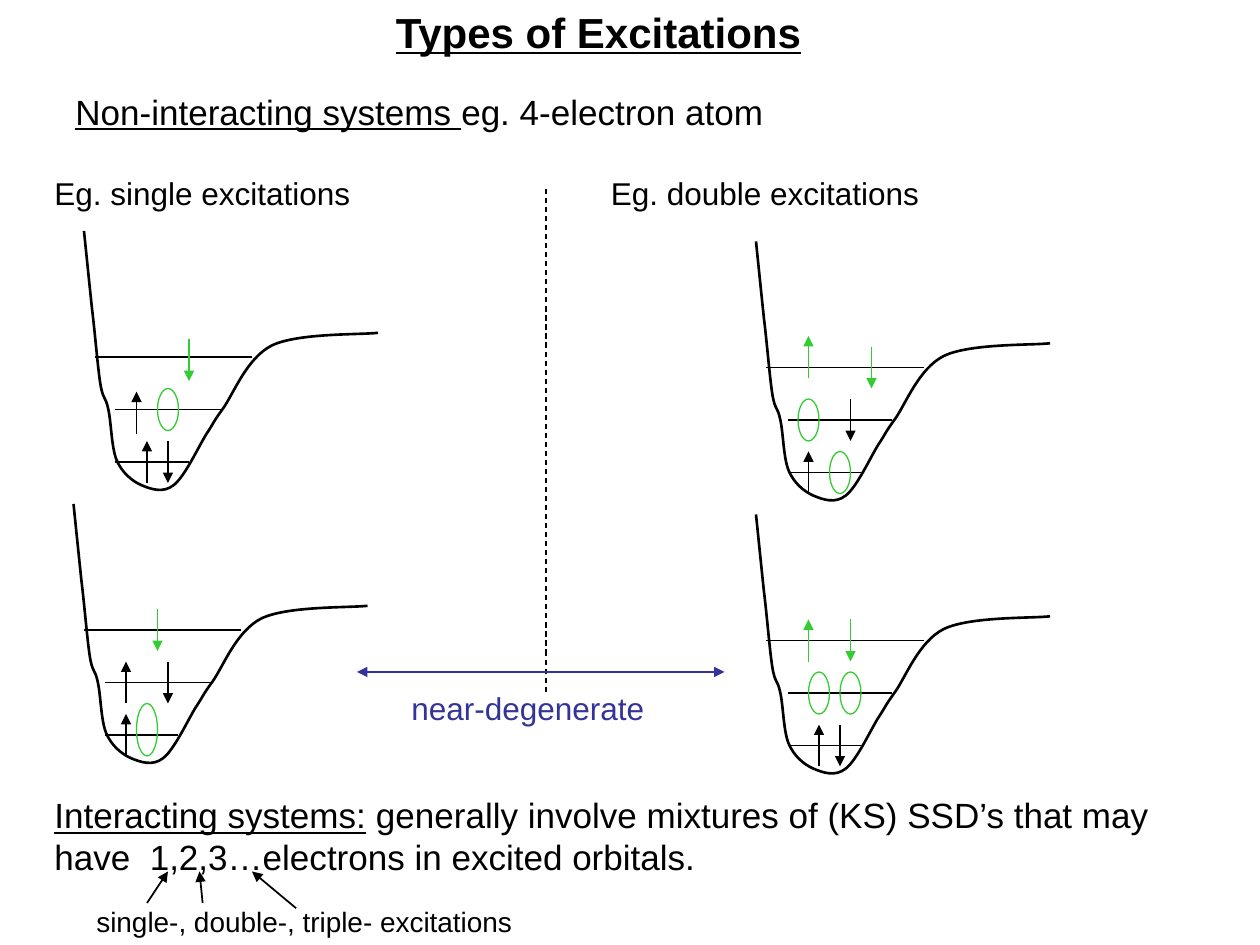
from dataclasses import dataclass
from typing import NamedTuple

from lxml.etree import SubElement
from pptx import Presentation
from pptx.dml.color import RGBColor
from pptx.enum.dml import MSO_LINE_DASH_STYLE as Dash
from pptx.enum.shapes import MSO_CONNECTOR, MSO_SHAPE
from pptx.enum.text import MSO_AUTO_SIZE, PP_ALIGN as Align
from pptx.oxml.ns import qn
from pptx.util import Inches, Pt


@dataclass(frozen=True)
class Theme:
    font: str = "Arial"
    ink: str = "000000"
    excited: str = "33CC33"
    link: str = "333399"
    title: int = 24
    body: int = 20
    label: int = 18
    note: int = 16
    thin: float = 0.75
    medium: float = 1
    thick: float = 1.5


class Electron(NamedTuple):
    column: float
    row: float
    up: bool
    excited: bool = False


class Hole(NamedTuple):
    column: float  # centre of the ellipse
    row: float
    height: float = 4


class Well(NamedTuple):
    column: float
    row: float
    electrons: list[Electron]
    holes: list[Hole]


THEME = Theme()
CELLS_PER_INCH = 12  # the slide is a grid of 120 columns by 90 rows
ARROW_ROWS = 4
HOLE_COLUMNS = 2

# Energy levels (first column, last column, row), measured from a well's corner
LEVELS = [(3, 10, 22), (1, 16, 12), (3, 13, 17)]

# Potential curve: start point, then three Bézier points for each stretch
CURVE = [
    (0, 0),
    (0.25, 2.4), (0.5, 4.85), (0.75, 7.25),
    (1.05, 9.7), (1.3, 12.9), (1.55, 14.5),
    (1.8, 16.1), (2.05, 15.7), (2.3, 16.9),
    (2.6, 18.15), (2.6, 20.55), (3.1, 21.8),
    (3.6, 23), (4.55, 23.8), (5.45, 24.2),
    (6.4, 24.6), (7.55, 25), (8.55, 24.2),
    (9.6, 23.4), (10.9, 20.55), (11.65, 19.35),
    (12.45, 18.15), (12.2, 18.35), (13.25, 16.9),
    (14.25, 15.5), (15.5, 12.1), (17.9, 10.9),
    (20.4, 9.7), (26.3, 9.9), (28, 9.7),
]

WELLS = [
    Well(8, 22,
         [Electron(6, 20, True), Electron(8, 20, False),
          Electron(5, 15.3, True), Electron(10, 10.3, False, True)],
         [Hole(8, 15)]),
    Well(72, 23,
         [Electron(5, 20, True), Electron(9, 15, False),
          Electron(5, 9, True, True), Electron(11, 10, False, True)],
         [Hole(5, 15), Hole(8, 20)]),
    Well(72, 49,
         [Electron(6, 20, True), Electron(8, 20, False),
          Electron(5, 10, True, True), Electron(9, 10, False, True)],
         [Hole(6, 15), Hole(9, 15)]),
    Well(7, 48,
         [Electron(5, 20, True), Electron(5, 15, True),
          Electron(9, 15, False), Electron(8, 10, False, True)],
         [Hole(7, 19, 5)]),
]


def cells(count: float) -> int:
    return Inches(count / CELLS_PER_INCH)


def color(code: str) -> RGBColor:
    return RGBColor.from_string(code)


def add_text(page, column: float, row: float, columns: float, rows: float, *parts: str,
             size: int, ink: str = THEME.ink, bold: bool = False,
             underline_first: bool = False, align: Align = Align.LEFT) -> None:
    box = page.shapes.add_textbox(*map(cells, (column, row, columns, rows)))
    box.text_frame.word_wrap = True
    box.text_frame.auto_size = MSO_AUTO_SIZE.SHAPE_TO_FIT_TEXT
    para = box.text_frame.paragraphs[0]
    para.alignment = align
    for index, part in enumerate(parts):
        span = para.add_run()
        span.text = part
        span.font.name = THEME.font
        span.font.size = Pt(size)
        span.font.bold = bold
        span.font.underline = underline_first and index == 0
        span.font.color.rgb = color(ink)


def add_line(page, start: tuple[float, float], end: tuple[float, float], *,
             ink: str = THEME.ink, width: float = THEME.thin,
             heads: tuple[str, ...] = (), dashed: bool = False) -> None:
    line = page.shapes.add_connector(MSO_CONNECTOR.STRAIGHT, *map(cells, start + end))
    line.line.color.rgb = color(ink)
    line.line.width = Pt(width)
    if dashed:
        line.line.dash_style = Dash.DASH
    properties = line._element.spPr
    for head in heads:
        SubElement(properties.find(qn("a:ln")), qn(f"a:{head}"), type="triangle")
    SubElement(properties, qn("a:effectLst"))


def outline(shape, ink: str, width: float) -> None:
    shape.shadow.inherit = False
    shape.fill.background()
    shape.line.color.rgb = color(ink)
    shape.line.width = Pt(width)


def add_curve(page, left: float, top: float) -> None:
    points = [(cells(left + x), cells(top + y)) for x, y in CURVE]
    builder = page.shapes.build_freeform(*points[0])
    builder.add_line_segments(points[1:], close=False)
    curve = builder.convert_to_shape()
    outline(curve, THEME.ink, THEME.thick)
    # Join every three straight segments into one Bézier stretch
    outline_path = next(curve._element.iter(qn("a:path")))
    segments = outline_path.findall(qn("a:lnTo"))
    for first in range(0, len(segments), 3):
        stretch = SubElement(outline_path, qn("a:cubicBezTo"))
        for segment in segments[first:first + 3]:
            stretch.append(segment[0])
            outline_path.remove(segment)


def add_well(page, well: Well) -> None:
    left, top = well.column, well.row
    # Potential and its levels
    add_curve(page, left, top)
    for first, last, row in LEVELS:
        add_line(page, (left + first, top + row), (left + last, top + row))
    # Electrons and the holes they leave
    for electron in well.electrons:
        x, y = left + electron.column, top + electron.row
        ends = [(x, y), (x, y + ARROW_ROWS)]
        start, end = reversed(ends) if electron.up else ends
        add_line(page, start, end, heads=("tailEnd",),
                 ink=THEME.excited if electron.excited else THEME.ink)
    for hole in well.holes:
        ellipse = page.shapes.add_shape(
            MSO_SHAPE.OVAL, cells(left + hole.column - HOLE_COLUMNS / 2),
            cells(top + hole.row), cells(HOLE_COLUMNS), cells(hole.height))
        outline(ellipse, THEME.excited, THEME.thin)


def main() -> None:
    deck = Presentation()
    deck.slide_width, deck.slide_height = cells(120), cells(90)
    page = deck.slides.add_slide(deck.slide_layouts[6])

    # Headings
    add_text(page, 11, 0, 92, 6, "Types of Excitations", size=THEME.title,
             bold=True, underline_first=True, align=Align.CENTER)
    add_text(page, 6, 8, 104, 5.2, "Non-interacting systems ", "eg. 4-electron atom",
             size=THEME.body, underline_first=True)
    add_text(page, 4, 16, 34, 4.8, "Eg. single excitations", size=THEME.label)
    add_text(page, 57, 16, 38, 4.8, "Eg. double excitations", size=THEME.label)

    # Wells, two-part divider and the link between the lower two
    for well in WELLS:
        add_well(page, well)
    for first, last in [(18, 62), (62, 66)]:
        add_line(page, (52, first), (52, last), dashed=True)
    add_line(page, (34, 64), (69, 64), ink=THEME.link, heads=("headEnd", "tailEnd"))
    add_text(page, 38, 65, 27, 4.8, "near-degenerate", size=THEME.label, ink=THEME.link)

    # Conclusion with its pointers
    add_text(page, 4, 75, 112, 9.2, "Interacting systems:",
             " generally involve mixtures of (KS) SSD’s that may have  1,2,3…electrons"
             " in excited orbitals.", size=THEME.body, underline_first=True)
    add_text(page, 8, 85.6, 47, 4.4, "single-, double-, triple- excitations", size=THEME.note)
    for start, end in [((14, 86), 16), ((19.3, 86), 19), ((28.2, 86.5), 24)]:
        add_line(page, start, (end, 83), width=THEME.medium, heads=("tailEnd",))

    deck.save("out.pptx")


if __name__ == "__main__":
    main()
